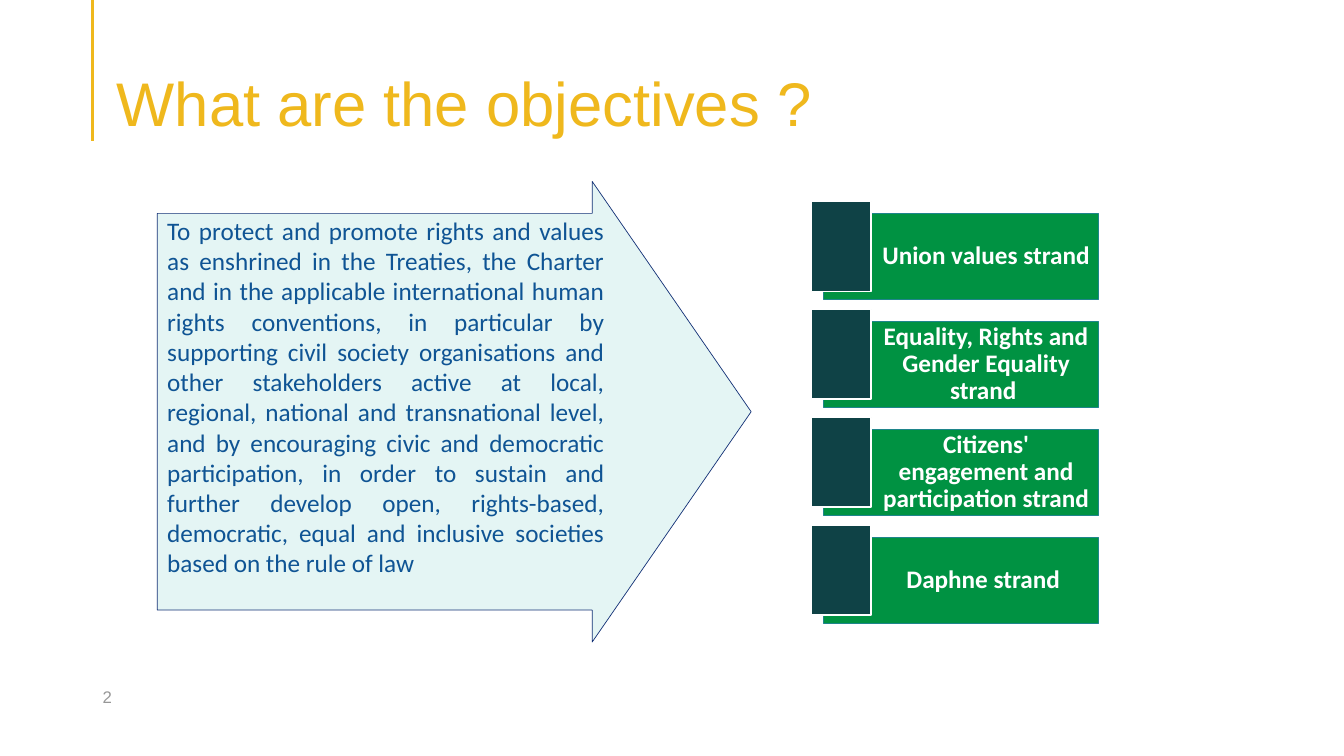
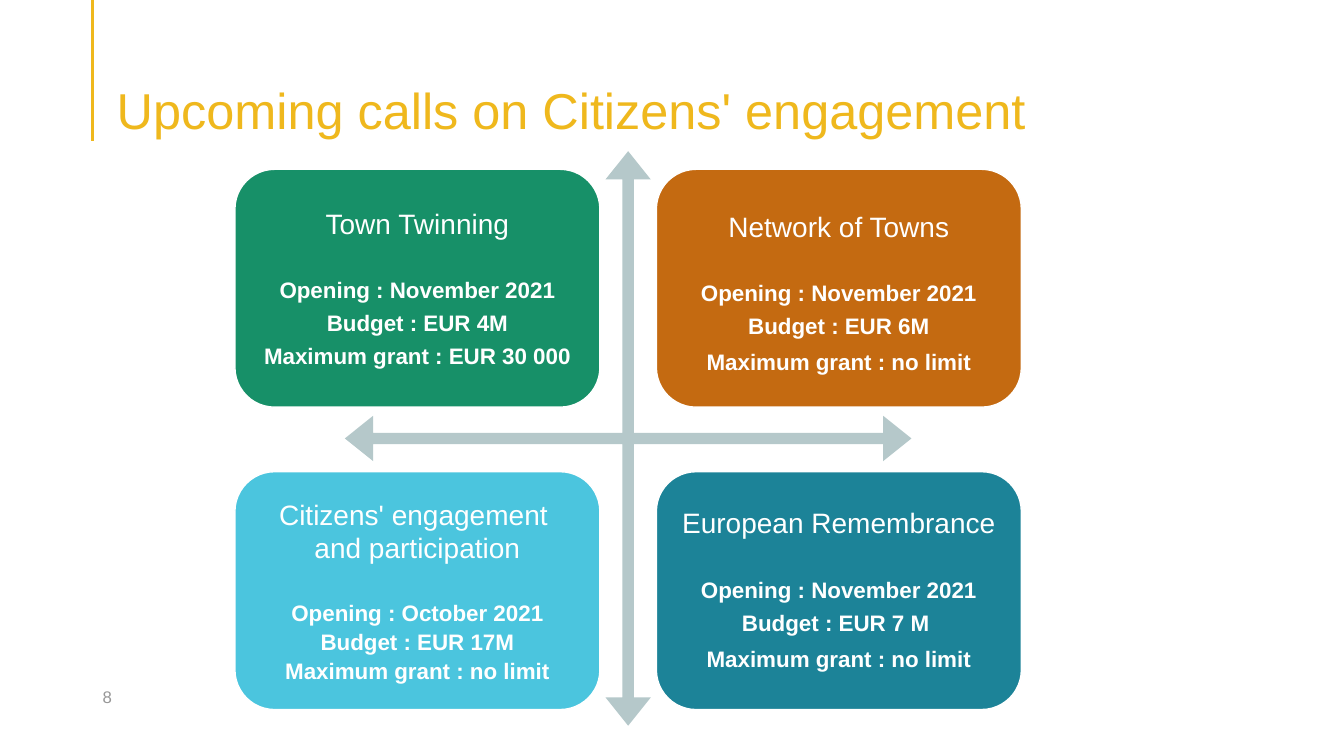
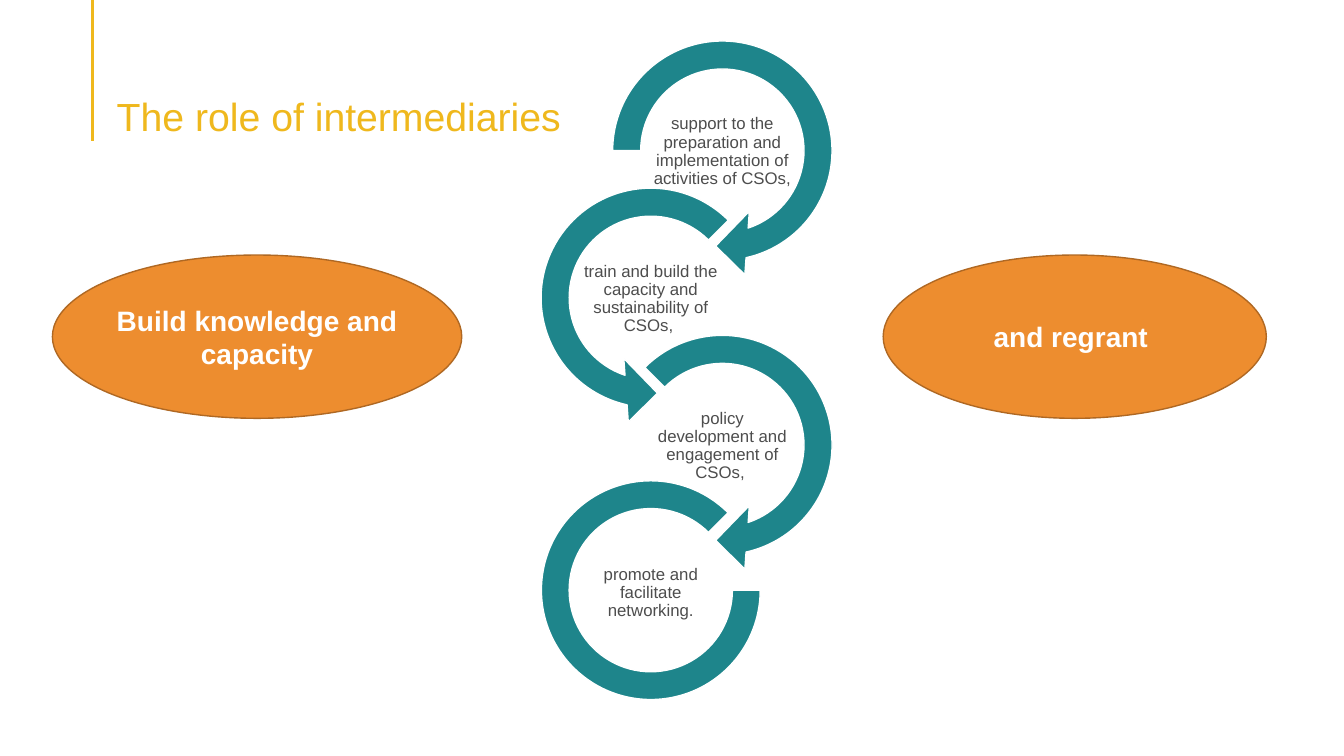
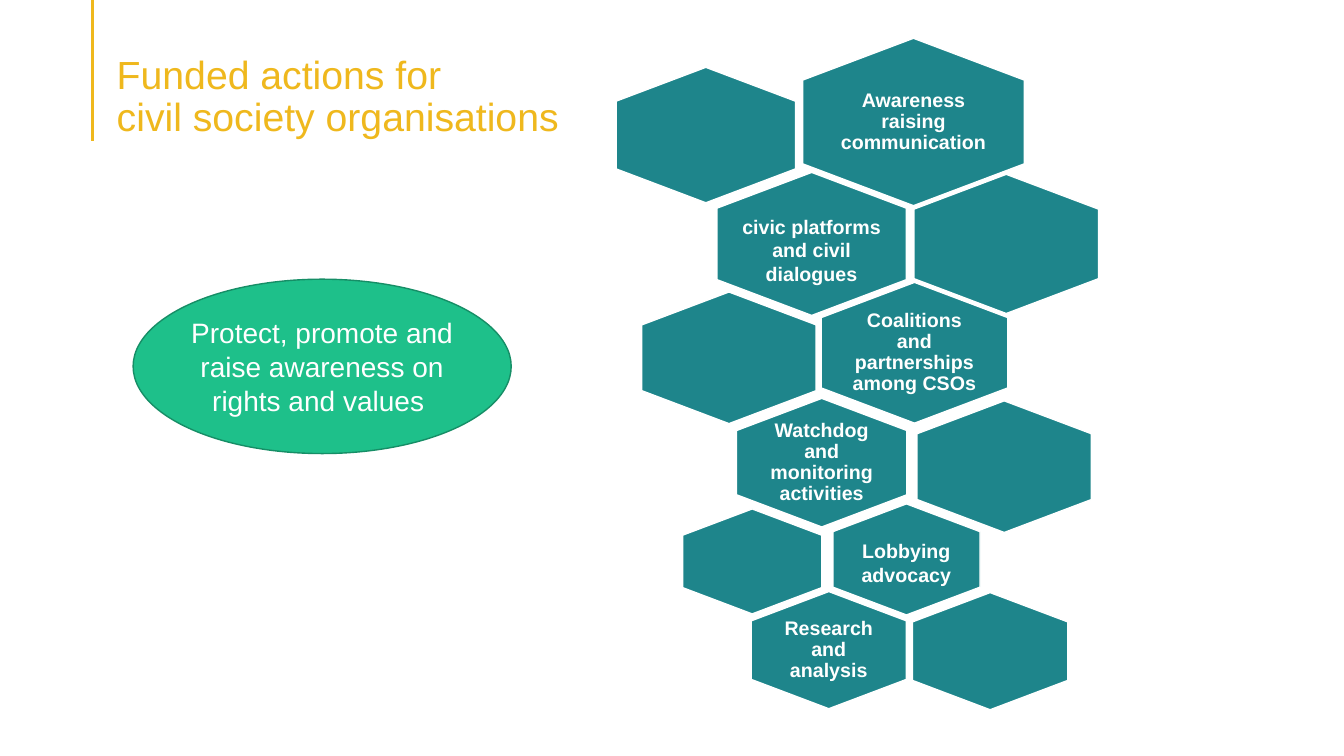
from dataclasses import dataclass

from lxml import etree
from pptx import Presentation
from pptx.dml.color import RGBColor
from pptx.enum.shapes import MSO_CONNECTOR, MSO_SHAPE
from pptx.enum.text import MSO_ANCHOR, PP_ALIGN
from pptx.oxml.ns import qn
from pptx.util import Inches, Pt

LEFT, MID, JUST = PP_ALIGN.LEFT, PP_ALIGN.CENTER, PP_ALIGN.JUSTIFY
MIDDLE, BOTTOM = MSO_ANCHOR.MIDDLE, MSO_ANCHOR.BOTTOM
RECT, ROUND, OVAL = MSO_SHAPE.RECTANGLE, MSO_SHAPE.ROUNDED_RECTANGLE, MSO_SHAPE.OVAL
HEX, ARROW, QUAD = MSO_SHAPE.HEXAGON, MSO_SHAPE.RIGHT_ARROW, MSO_SHAPE.QUAD_ARROW
TURN, BACK, ARC = MSO_SHAPE.CIRCULAR_ARROW, MSO_SHAPE.LEFT_CIRCULAR_ARROW, MSO_SHAPE.BLOCK_ARC
STRAIGHT = MSO_CONNECTOR.STRAIGHT


@dataclass(frozen=True)
class Theme:
    sans: str = "Arial"
    body: str = "Calibri"
    gold: str = "EFB81D"
    gray: str = "979797"
    dark: str = "4D4D4D"
    white: str = "FFFFFF"
    teal: str = "1E858B"
    aqua: str = "4EBEBB"
    navy: str = "133176"
    blue: str = "0F5494"
    green: str = "009242"
    pine: str = "0F4246"
    mist: str = "B5C8CA"
    moss: str = "179068"
    rust: str = "C46A11"
    sky: str = "4BC5DE"
    lake: str = "1C8398"
    orange: str = "ED8D2F"
    brown: str = "AF6823"
    mint: str = "1EC08A"
    leaf: str = "168E66"
    tiny: int = 12
    small: int = 14
    fact: int = 16
    text: int = 18
    head: int = 20
    title: int = 28
    large: int = 36
    huge: int = 44
    tight: float = 0.9
    gap: float = 6.3


T = Theme()


def tint(name):
    return RGBColor.from_string(name)


@dataclass
class Para:
    text: str
    size: float
    color: str = T.white
    bold: bool = False
    font: str = T.sans
    align: int = MID
    line: float = 1.0
    after: float = 0
    before: float = 0


class Deck:
    def __init__(self):
        self.prs = Presentation()
        self.prs.slide_width, self.prs.slide_height = Inches(13.33), Inches(7.5)
        self.slide = None

    def start(self, title, size, number=None):
        """Add a slide with the gold rule, its title and perhaps its number."""
        self.slide = self.prs.slides.add_slide(self.prs.slide_layouts[6])
        rule = self.slide.shapes.add_connector(
            STRAIGHT, Inches(0.92), 0, Inches(0.92), Inches(1.4))
        rule.line.color.rgb = tint(T.gold)
        rule.line.width = Pt(2.25)
        etree.SubElement(rule._element.spPr, qn("a:effectLst"))
        self.box((1.06, 0.53, 11.5, 0.86),
                 [Para(title, size, T.gold, align=LEFT, line=T.tight)],
                 (0.1, 0.05, 0.1, 0), BOTTOM)
        if number:
            self.box((0.92, 6.71, 3, 0.4), [Para(number, T.tiny, T.gray, align=LEFT)],
                     (0.1, 0.05, 0.1, 0.05))

    def label(self, shape, paras, pads, anchor=MIDDLE):
        frame = shape.text_frame
        frame.word_wrap = True
        frame.vertical_anchor = anchor
        (frame.margin_left, frame.margin_top,
         frame.margin_right, frame.margin_bottom) = map(Inches, pads)
        for i, item in enumerate(paras):
            par = frame.add_paragraph() if i else frame.paragraphs[0]
            par.text = item.text
            par.alignment = item.align
            par.line_spacing = item.line
            par.space_before, par.space_after = Pt(item.before), Pt(item.after)
            par.font.name, par.font.size = item.font, Pt(item.size)
            par.font.bold = item.bold
            par.font.color.rgb = tint(item.color)

    def box(self, at, paras, pads=(0, 0, 0, 0), anchor=MIDDLE):
        self.label(self.slide.shapes.add_textbox(*map(Inches, at)), paras, pads, anchor)

    def shape(self, kind, at, fill, line=None, width=1, adj=(), alpha=None):
        form = self.slide.shapes.add_shape(kind, *map(Inches, at))
        form.shadow.inherit = False
        form.fill.solid()
        form.fill.fore_color.rgb = tint(fill)
        if alpha:
            color = form._element.spPr.find(qn("a:solidFill"))[0]
            etree.SubElement(color, qn("a:alpha"), val=str(alpha * 1000))
        if line:
            form.line.color.rgb = tint(line)
            form.line.width = Pt(width)
        else:
            form.line.fill.background()
        for i, value in enumerate(adj):
            form.adjustments[i] = value
        return form

    def oval(self, at, text, fill, line, bold):
        form = self.shape(OVAL, at, fill, line)
        self.label(form, [Para(text, T.head, bold=bold)], (0, 0.04, 0, 0.04))

    def strand(self, top, text):
        bar = self.shape(RECT, (8.17, top, 2.72, 0.85), T.green, T.teal, 0.5)
        self.label(bar, [Para(text, T.text, bold=True, font=T.body, line=T.tight)],
                   (0.57, 0.07, 0.07, 0.07))
        self.shape(RECT, (8.05, top - 0.12, 0.59, 0.89), T.pine, T.white)

    def card(self, col, row, fill, paras, drop=0):
        form = self.shape(ROUND, (2.33 + 4.18 * col, 1.68 + 3 * row, 3.62, 2.36),
                          fill, T.white)
        self.label(form, paras, (0.04, 0.04 + drop, 0.04, 0.04))

    def cell(self, x, y, wide, text=None, room=None, line=T.tight, drop=0):
        """Draw an upright hexagon about (x, y), with text over it if given."""
        high = wide * 0.755
        form = self.shape(HEX, (x - high / 2, y - wide / 2, high, wide),
                          T.teal, T.white, adj=(0.25, 1.1547))
        form.rotation = 90
        if text:
            room = room or wide * 0.667
            self.box((x - room / 2, y - high / 3 + drop, room, high * 2 / 3),
                     [Para(part, T.small, bold=True, line=line)
                      for part in text.split("\n")])


def goals(deck):
    deck.start("What are the objectives ?", T.huge, "2")
    aim = deck.shape(ARROW, (1.56, 1.8, 5.89, 4.57), T.aqua, T.navy, 0.5,
                     (0.861, 0.345), alpha=15)
    deck.label(aim, [Para(
        "To protect and promote rights and values as enshrined in the Treaties, "
        "the Charter and in the applicable international human rights conventions, "
        "in particular by supporting civil society organisations and other "
        "stakeholders active at local, regional, national and transnational level, "
        "and by encouraging civic and democratic participation, in order to sustain "
        "and further develop open, rights-based, democratic, equal and inclusive "
        "societies based on the rule of law",
        T.text, T.blue, font=T.body, align=JUST)], (0.1, 0.05, 0.1, 0.35))
    names = ("Union values strand", "Equality, Rights and Gender Equality strand ",
             "Citizens' engagement and participation strand", "Daphne strand ")
    for i, name in enumerate(names):
        deck.strand(2.12 + 1.07 * i, name)


def facts(month, budget, grant, last):
    """Give the three bold lines of a card; last is the final line's spacing."""
    rows = (f"Opening : {month} 2021", f"Budget : EUR {budget}", f"Maximum grant : {grant}")
    return [Para(row, T.fact, bold=True, line=line, after=T.gap)
            for row, line in zip(rows, (T.tight, T.tight, last))]


def calls(deck):
    deck.start("Upcoming calls on Citizens' engagement", T.large, "8")
    deck.shape(QUAD, (3.42, 1.5, 5.62, 5.7), T.mist, adj=(0.02, 0.04, 0.05))
    deck.card(0, 0, T.moss, [Para("Town Twinning", T.head, after=28)]
              + facts("November", "4M", "EUR 30 000", T.tight))
    deck.card(1, 0, T.rust, [Para("Network of Towns", T.head, line=T.tight, after=28)]
              + facts("November", "6M", "no limit", 1.0), 0.12)
    civic = facts("October", "17M", "no limit", 1.0)
    for i, item in enumerate(civic):
        item.line, item.before, item.after = 1.0, min(i, 1), min(i, 1)
    deck.card(0, 1, T.sky, [Para("Citizens' engagement ", T.head),
                            Para("and participation", T.head, after=25)] + civic)
    deck.card(1, 1, T.lake, [Para("European Remembrance", T.head, line=T.tight, after=28)]
              + facts("November", "7 M ", "no limit", 1.0))


def roles(deck):
    deck.start("The role of intermediaries", T.title)
    deck.oval((0.52, 2.53, 4.06, 1.62), "Build knowledge and capacity",
              T.orange, T.brown, True)
    deck.oval((8.76, 2.53, 3.8, 1.62), "and regrant ", T.orange, T.brown, True)
    loops = (
        (TURN, 45, 108, "support to the preparation and implementation of activities of CSOs, "),
        (BACK, 63, 189, "train and build the capacity and sustainability of CSOs, "),
        (TURN, 45, 135, "policy development and engagement of CSOs, "),
        (ARC, 0, 189, "promote and facilitate networking."),
    )
    for i, (kind, head, tail, text) in enumerate(loops):
        x, y = 5.9 - 0.71 * (i % 2), 0.23 + 1.46 * i
        if kind == ARC:
            at, adj = (x + 0.18, y + 0.16, 2.17, 2.17), (head, tail, 0.127)
        else:
            at, adj = (x, y, 2.53, 2.53), (0.11, 11.42, head, tail, 0.125)
        deck.shape(kind, at, T.teal, T.white, adj=adj)
        deck.box((x + 0.56, y + 0.92, 1.41, 0.71),
                 [Para(text, T.tiny, T.dark, line=T.tight)], (0.01,) * 4)


def acts(deck):
    deck.start("Funded actions for \ncivil society organisations", T.title)
    deck.oval((1.32, 2.77, 3.75, 1.73),
              "Protect, promote and raise awareness on rights and values ",
              T.mint, T.leaf, False)
    for x, y, wide in ((7, 1.34, 1.78), (9.98, 2.42, 1.83), (7.23, 3.55, 1.73),
                       (9.96, 4.63, 1.73), (7.46, 5.57, 1.38), (9.82, 6.46, 1.54)):
        deck.cell(x, y, wide)
    deck.cell(9.06, 1.21, 2.2, "Awareness raising communication")
    deck.cell(8.05, 2.42, 1.88, "civic platforms and civil dialogues", 1.47, 1.0, 0.06)
    deck.cell(9.07, 3.5, 1.85, "Coalitions and partnerships among CSOs")
    deck.cell(8.15, 4.59, 1.69, "Watchdog and monitoring activities")
    deck.cell(8.99, 5.55, 1.46, "Lobbying\nadvocacy", line=1.0, drop=0.03)
    deck.cell(8.22, 6.45, 1.54, "Research and analysis")


def main():
    deck = Deck()
    for page in (goals, calls, roles, acts):
        page(deck)
    deck.prs.save("out.pptx")


if __name__ == "__main__":
    main()
